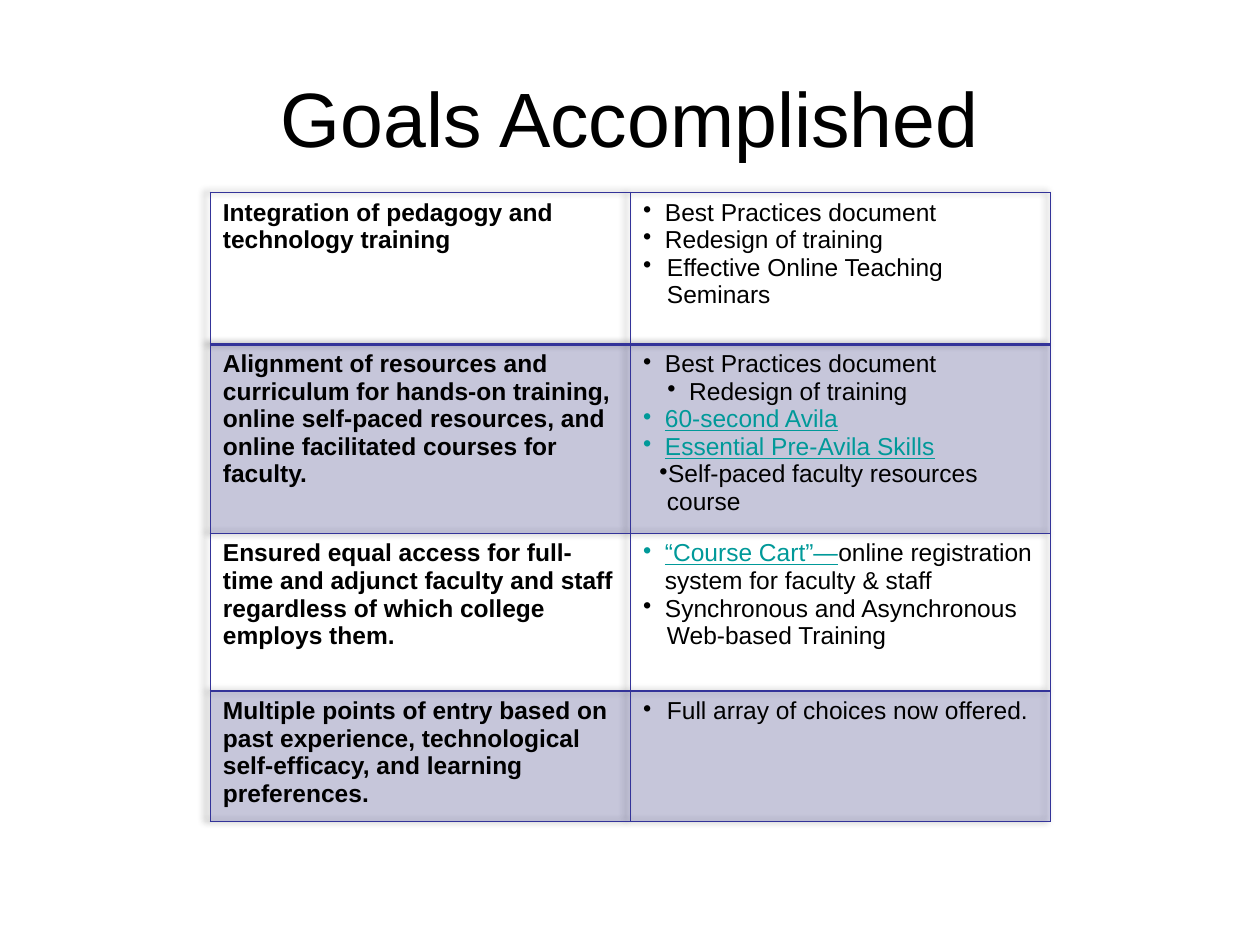
import pptx
import pptx.dml.color
import pptx.enum.text
import pptx.oxml
import pptx.oxml.ns
import pptx.util
from pptx.util import Cm

BLACK = pptx.dml.color.RGBColor(0x00, 0x00, 0x00)
INDIGO = pptx.dml.color.RGBColor(0x33, 0x33, 0x99)
TEAL = pptx.dml.color.RGBColor(0x00, 0x99, 0x99)
NS = pptx.oxml.ns.nsdecls("a")


def link(text):
    return text, dict(color=TEAL, underline=True)


def item(*runs, left=0.44, hang=0.44, bullet=True):
    """Describe one paragraph; left and hang are in centimetres."""
    return runs, left, hang, bullet


class Deck:
    font = "Arial"
    body_size = 14
    title_size = 44

    def __init__(self):
        self.prs = pptx.Presentation()
        self.prs.slide_width, self.prs.slide_height = Cm(25.4), Cm(19.05)
        self.s = self.prs.slides.add_slide(self.prs.slide_layouts[6])

    def run(self, p, text, size=body_size, color=BLACK, bold=False, underline=False):
        r = p.add_run()
        r.text = text
        f = r.font
        f.name, f.size, f.bold = self.font, pptx.util.Pt(size), bold
        f.underline = underline
        f.color.rgb = color

    def title(self, text, x, y, w, h):
        tf = self.s.shapes.add_textbox(Cm(x), Cm(y), Cm(w), Cm(h)).text_frame
        tf.word_wrap = True
        tf.vertical_anchor = pptx.enum.text.MSO_ANCHOR.MIDDLE
        p = tf.paragraphs[0]
        p.alignment = pptx.enum.text.PP_ALIGN.CENTER
        self.run(p, text, size=self.title_size)

    def bullets(self, tf, items):
        for i, (runs, left, hang, bullet) in enumerate(items):
            p = tf.add_paragraph() if i else tf.paragraphs[0]
            pPr = p._p.get_or_add_pPr()
            pPr.set("marL", str(Cm(left)))
            pPr.set("indent", str(-Cm(hang)))
            mark = '<a:buChar %s char="•"/>' if bullet else "<a:buNone %s/>"
            pPr.append(pptx.oxml.parse_xml(mark % NS))
            for r in runs:
                text, style = (r, {}) if isinstance(r, str) else r
                self.run(p, text, **style)

    def borders(self, cell, top, bottom):
        """Draw all four sides; top and bottom widths are in points."""
        tcPr = cell._tc.get_or_add_tcPr()
        sides = (("lnL", 1), ("lnR", 1), ("lnT", top), ("lnB", bottom))
        for i, (side, width) in enumerate(sides):
            tcPr.insert(i, pptx.oxml.parse_xml(
                f'<a:{side} {NS} w="{pptx.util.Pt(width)}"><a:solidFill>'
                f'<a:srgbClr val="{INDIGO}"/></a:solidFill></a:{side}>'))

    def tint(self, cell, percent):
        cell.fill.solid()
        cell.fill.fore_color.rgb = INDIGO
        color = cell._tc.tcPr.find(".//" + pptx.oxml.ns.qn("a:srgbClr"))
        color.append(pptx.oxml.parse_xml(f'<a:alpha {NS} val="{percent * 1000}"/>'))

    def table(self, rows, heights, x, y, w):
        table = self.s.shapes.add_table(
            len(rows), 2, Cm(x), Cm(y), Cm(w), Cm(sum(heights))).table
        table.first_row = table.horz_banding = False
        table._tbl.tblPr.insert(0, pptx.oxml.parse_xml(
            f'<a:effectLst {NS}><a:outerShdw blurRad="50800" dist="38100" '
            'dir="10800000"><a:srgbClr val="000000"><a:alpha val="40000"/>'
            '</a:srgbClr></a:outerShdw></a:effectLst>'))
        for i, (goal, results) in enumerate(rows):
            table.rows[i].height = Cm(heights[i])
            left, right = table.cell(i, 0), table.cell(i, 1)
            self.run(left.text_frame.paragraphs[0], goal, bold=True)
            self.bullets(right.text_frame, results)
            for cell in (left, right):
                if i % 2:
                    self.tint(cell, 20)
                else:
                    cell.fill.background()
                self.borders(cell, top=2 if i == 1 else 1, bottom=2 if i == 0 else 1)


ROWS = [
    ("Integration of pedagogy and technology training",
     [item("Best Practices document"),
      item("Redesign of training"),
      item("Effective Online Teaching Seminars", left=0.48, hang=0.48)]),
    ("Alignment of resources and curriculum for hands-on training, online "
     "self-paced resources, and online facilitated courses for faculty.",
     [item("Best Practices document"),
      item("Redesign of training", left=0.93),
      item(link("60-second Avila")),
      item(link("Essential Pre-Avila Skills")),
      item("Self-paced faculty resources course", left=0.48, hang=0.15)]),
    ("Ensured equal access for full-time and adjunct faculty and staff "
     "regardless of which college employs them.",
     [item(link("“Course Cart”—"), "online registration system for faculty & staff"),
      item("Synchronous and Asynchronous"),
      item("Web-based Training", left=0.48, hang=0, bullet=False)]),
    ("Multiple points of entry based on past experience, technological "
     "self-efficacy, and learning preferences.",
     [item("Full array of choices now offered.", left=0.48, hang=0.48)]),
]


def main():
    deck = Deck()
    deck.title("Goals Accomplished", 1.27, 0.76, 22.86, 3.18)
    deck.table(ROWS, [3.06, 3.59, 3.18, 2.48], 4.24, 3.88, 16.94)
    deck.prs.save("out.pptx")


if __name__ == "__main__":
    main()
